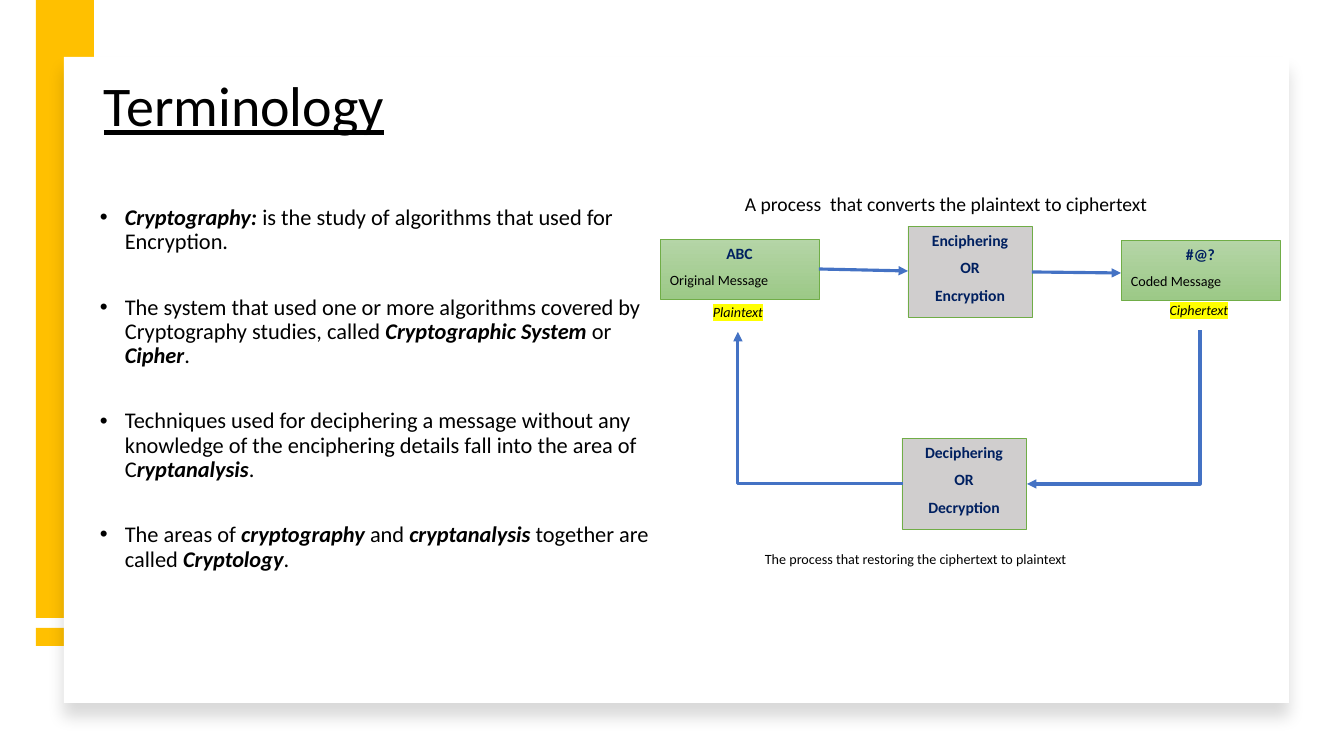
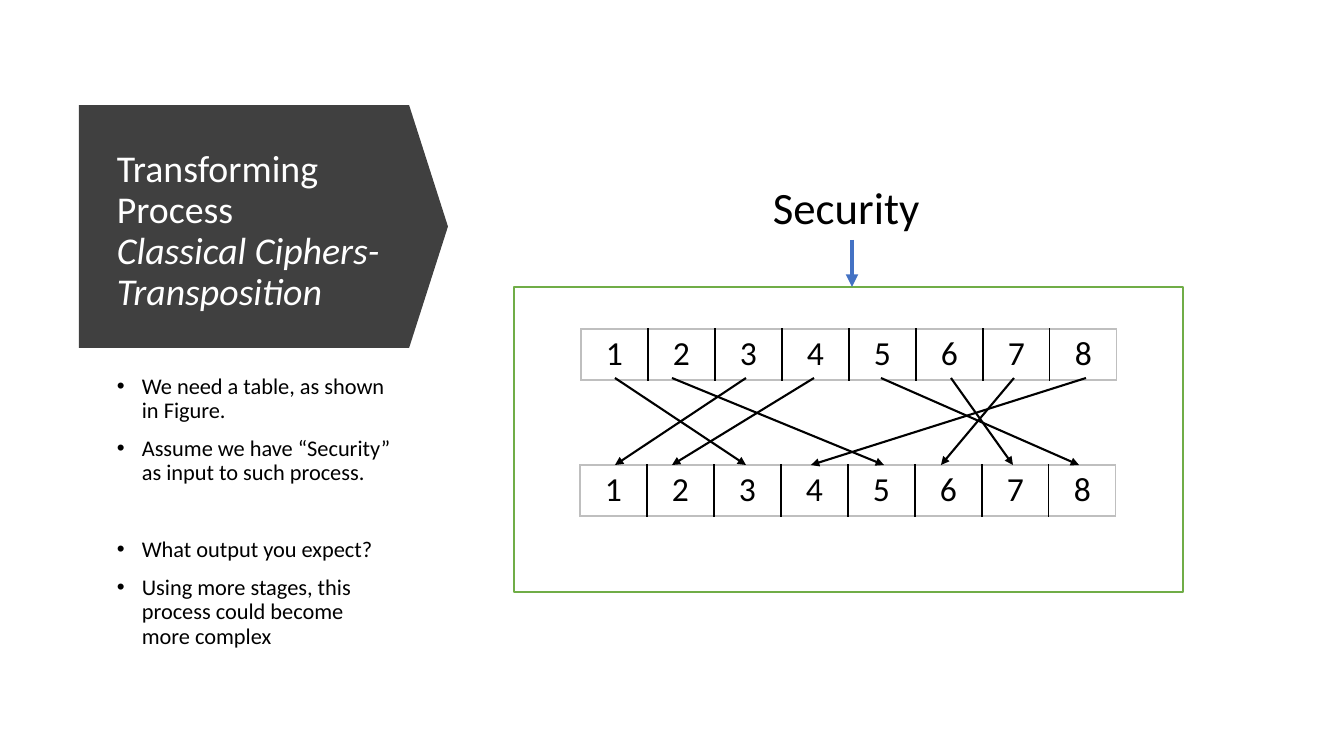
import pptx
import pptx.util
import pptx.dml.color
import pptx.enum.shapes
import pptx.enum.text
import pptx.oxml
import pptx.oxml.ns
from lxml import etree

SHAPE = pptx.enum.shapes.MSO_SHAPE
CONN = pptx.enum.shapes.MSO_CONNECTOR
ANCHOR = pptx.enum.text.MSO_ANCHOR
ALIGN = pptx.enum.text.PP_ALIGN
Pt = pptx.util.Pt
qn = pptx.oxml.ns.qn

# Shared style
FONT = "Calibri"
BLACK, WHITE, NAVY = "000000", "FFFFFF", "002060"
YELLOW, DARK, GREY, SILVER = "FFC000", "404040", "D0CECE", "BFBFBF"
GREEN, BLUE, MARKER = "70AD47", "4472C4", "FFFF00"
GREEN_FADE = ("B5D5A7", "9CC987")
PX_PER_INCH = 100.8
BI = dict(bold=True, italic=True)

# Content: terminology slide
TERMS = [
    [("Cryptography:", BI), " is the study of algorithms that used for Encryption."],
    ["The system that used one or more algorithms covered by Cryptography studies, called ",
     ("Cryptographic System ", BI), "or", (" Cipher", BI), "."],
    ["Techniques used for deciphering a message without any knowledge of the "
     "enciphering details fall into the area of C", ("ryptanalysis", BI), "."],
    ["The areas of ", ("cryptography", BI), " and ", ("cryptanalysis", BI),
     " together are called ", ("Cryptology", BI), "."],
]
BANDS = [(36, 0, 58, 618), (36, 628, 58, 18)]
CARD = (64, 57, 1225, 646)
MESSAGES = [  # left, top, symbol, description, label, label box
    (660, 239, "ABC", "Original Message", "Plaintext", (669, 298, 138, 33)),
    (1121, 240, "#@?", "Coded Message", "Ciphertext", (1130, 296, 138, 33)),
]
PROCESSES = [
    (908, 226, ["Enciphering", "OR", "Encryption"]),
    (902, 438, ["Deciphering", "OR", "Decryption"]),
]
CAPTIONS = [
    ((735, 187, 427, 34), 14, "A process  that converts the plaintext to ciphertext"),
    ((755, 545, 407, 33), 10.1, "The process that restoring the ciphertext to plaintext"),
]
FLOWS = [  # start, end, connector type, arrow end
    ((819, 269), (908, 271), CONN.STRAIGHT, "tailEnd"),
    ((1032, 272), (1121, 273), CONN.STRAIGHT, "tailEnd"),
    ((1027, 484), (1200, 330), CONN.ELBOW, "headEnd"),
    ((903, 484), (738, 332), CONN.ELBOW, "tailEnd"),
]

# Content: transposition slide
HEADING = ["Transforming Process", "\n", ("Classical Ciphers-Transposition", dict(italic=True))]
NOTES = [  # text, points before
    ("We need a table, as shown in Figure.", 10),
    ("Assume we have “Security” as input to such process.", 10),
    ("What output you expect?", 37.6),
    ("Using more stages, this process could become more complex", 10),
]
ROWS = [(581, 329), (580, 465)]
CELL_W, CELL_H = 67, 51
TARGETS = [3, 5, 1, 2, 8, 7, 6, 4]
START_X = [615, 672, 746, 814, 881, 951, 1014, 1086]
END_X = [615, 672, 746, 811, 884, 941, 1013, 1079]


def px(n):
    return round(n * 914400 / PX_PER_INCH)


def rgb(value):
    return pptx.dml.color.RGBColor.from_string(value)


def sub(parent, tag, **attrs):
    return etree.SubElement(parent, qn(tag), attrs)


def write(tf, runs, first=False, size=16, color=BLACK, bold=False, italic=False,
          underline=False, highlight=None, align=ALIGN.LEFT, spacing=None,
          before=0, after=0, bullet=None):
    """Add one paragraph; a run is a string or a (string, format) pair."""
    p = tf.paragraphs[0] if first else tf.add_paragraph()
    p.alignment = align
    if spacing:
        p.line_spacing = spacing
    p.space_before, p.space_after = Pt(before), Pt(after)
    if bullet:
        pPr = p._p.get_or_add_pPr()
        pPr.set("marL", str(px(bullet)))
        pPr.set("indent", str(-px(25)))
        sub(pPr, "a:buFont", typeface="Arial")
        sub(pPr, "a:buChar", char="•")
    for run in [runs] if isinstance(runs, str) else runs:
        text, style = (run, {}) if isinstance(run, str) else run
        if text == "\n":
            p.add_line_break()
            continue
        r = p.add_run()
        r.text = text
        f = r.font
        f.name, f.size, f.color.rgb = FONT, Pt(size), rgb(color)
        f.bold, f.italic = style.get("bold", bold), style.get("italic", italic)
        f.underline = underline
        if highlight:
            mark = etree.Element(qn("a:highlight"))
            sub(mark, "a:srgbClr", val=highlight)
            r._r.rPr.find(qn("a:solidFill")).addnext(mark)


def frame(shape, anchor=ANCHOR.TOP):
    tf = shape.text_frame
    tf.word_wrap = True
    tf.vertical_anchor = anchor
    return tf


def textbox(s, box, anchor=ANCHOR.TOP):
    return frame(s.shapes.add_textbox(*map(px, box)), anchor)


def title(s, box, runs, anchor, **fmt):
    write(textbox(s, box, anchor), runs, first=True, spacing=0.9, **fmt)


def block(s, box, fill=None, line=None, width=0.5, kind=SHAPE.RECTANGLE):
    sp = s.shapes.add_shape(kind, *map(px, box))
    sp.shadow.inherit = False
    if isinstance(fill, tuple):
        sp.fill.gradient()
        sp.fill.gradient_angle = 270
        for stop, color in zip(sp.fill.gradient_stops, fill):
            stop.color.rgb = rgb(color)
    elif fill:
        sp.fill.solid()
        sp.fill.fore_color.rgb = rgb(fill)
    else:
        sp.fill.background()
    if line:
        sp.line.color.rgb, sp.line.width = rgb(line), Pt(width)
    else:
        sp.line.fill.background()
    return sp


def arrow(s, start, end, color, width, kind=CONN.STRAIGHT, tip="tailEnd"):
    c = s.shapes.add_connector(kind, *map(px, start + end))
    c.line.color.rgb, c.line.width = rgb(color), Pt(width)
    spPr = c._element.spPr
    sub(spPr.find(qn("a:ln")), "a:" + tip, type="triangle")
    sub(spPr, "a:effectLst")
    if kind == CONN.ELBOW:  # one corner only
        spPr.find(qn("a:prstGeom")).set("prst", "bentConnector2")


def border(cell, side, color):
    ln = sub(cell._tc.get_or_add_tcPr(), "a:" + side, w=str(Pt(1)))
    sub(sub(ln, "a:solidFill"), "a:srgbClr", val=color)


def number_row(s, left, top, count):
    box = (left, top, CELL_W * count, CELL_H)
    table = s.shapes.add_table(1, count, *map(px, box)).table
    table.first_row = table.horz_banding = False
    for i in range(count):
        table.columns[i].width = px(CELL_W)
        cell = table.cell(0, i)
        write(cell.text_frame, str(i + 1), first=True, size=24, align=ALIGN.CENTER)
        border(cell, "lnL", BLACK if i else SILVER)
        border(cell, "lnR", BLACK if i < count - 1 else SILVER)
        border(cell, "lnT", SILVER)
        border(cell, "lnB", SILVER)
        cell.fill.background()


def terminology(s):
    # Yellow bands and raised card
    for band in BANDS:
        block(s, band, YELLOW)
    card = block(s, CARD, WHITE)
    effects = card._element.spPr.find(qn("a:effectLst"))
    shadow = sub(effects, "a:outerShdw", blurRad=str(Pt(11)), dist=str(Pt(10)), dir="5400000")
    sub(sub(shadow, "a:srgbClr", val=BLACK), "a:alpha", val="15000")

    # Title and definitions
    title(s, (94, 15, 555, 129), "Terminology", ANCHOR.BOTTOM, size=40, underline=True)
    tf = textbox(s, (84, 201, 589, 400))
    for i, runs in enumerate(TERMS):
        write(tf, runs, first=i == 0, spacing=0.9, after=29.6, bullet=31)

    # Cipher diagram
    for left, top, symbol, text, label, label_box in MESSAGES:
        tf = frame(block(s, (left, top, 159, 60), GREEN_FADE, GREEN))
        write(tf, symbol, first=True, size=11.2, color=NAVY, bold=True,
              align=ALIGN.CENTER, after=6)
        write(tf, text, size=10.1, after=6)
        write(textbox(s, label_box), label, first=True, size=10.1, italic=True,
              highlight=MARKER, align=ALIGN.CENTER)
    for left, top, lines in PROCESSES:
        tf = frame(block(s, (left, top, 124, 91), GREY, GREEN))
        for i, text in enumerate(lines):
            write(tf, text, first=i == 0, size=11.2, color=NAVY, bold=True,
                  align=ALIGN.CENTER, after=6)
    for box, size, text in CAPTIONS:
        write(textbox(s, box), text, first=True, size=size)
    for start, end, kind, tip in FLOWS:
        arrow(s, start, end, BLUE, 2.25, kind, tip)


def transposition(s):
    # Heading arrow and notes
    banner = block(s, (79, 105, 369, 243), DARK, kind=SHAPE.PENTAGON)
    banner.adjustments[0] = 0.16
    title(s, (107, 133, 294, 197), HEADING, ANCHOR.MIDDLE, size=27, color=WHITE)
    tf = textbox(s, (107, 370, 294, 331))
    for i, (text, before) in enumerate(NOTES):
        write(tf, text, first=i == 0, spacing=0.9, before=before, bullet=25)

    # Input word, number rows and frame
    for left, top in ROWS:
        number_row(s, left, top, len(TARGETS))
    block(s, (514, 287, 669, 305), line=GREEN, width=1)
    write(textbox(s, (763, 175, 178, 65)), "Security", first=True, size=32)
    arrow(s, (852, 240), (852, 287), BLUE, 3)

    # Permutation
    for x, target in zip(START_X, TARGETS):
        arrow(s, (x, 378), (END_X[target - 1], 465), BLACK, 1.5)


def main():
    prs = pptx.Presentation()
    prs.slide_width, prs.slide_height = px(1344), px(756)
    for build in (terminology, transposition):
        build(prs.slides.add_slide(prs.slide_layouts[6]))
    prs.save("out.pptx")


if __name__ == "__main__":
    main()
